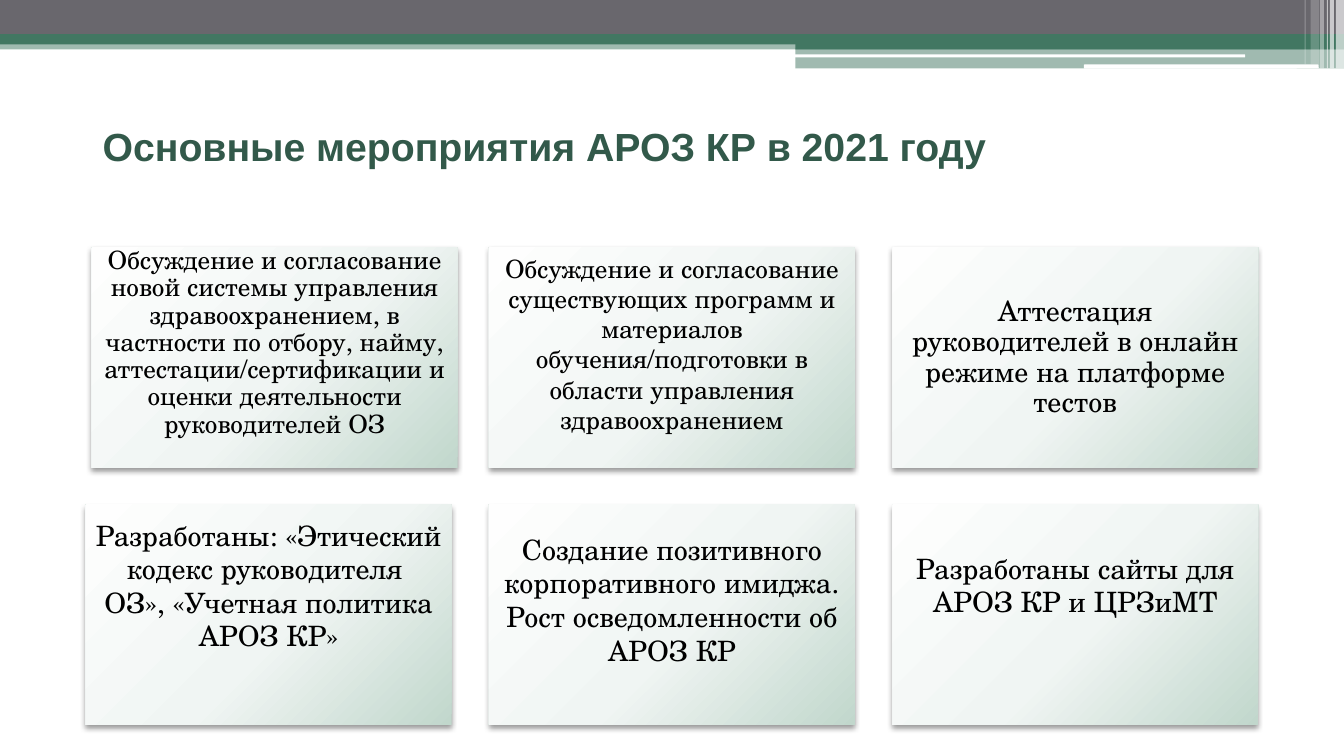
from lxml import etree
from pptx import Presentation
from pptx import util as u
from pptx.dml.color import RGBColor
from pptx.enum import shapes, text
from pptx.oxml.ns import qn

WIDE, HIGH = 13.33, 7.5
GREEN, GREY, WHITE = "427762", "69676D", "FFFFFF"
SERIF = "TeX Gyre Schola"

# Card grid: left edge, top edge, steps and size
LEFT, TOP, COL, ROW = 0.85, 2.46, 4, 2.55
CARD_W, CARD_H = 3.63, 2.18
STOPS = [(0, "FEFEFE"), (55, "F0F5F3"), (100, "C1D7CC")]

# Header bands: left, top, width, height, colour, opacity
BANDS = [
    (0, 0.4, WIDE, 0.09, GREEN, 50),
    (0, 0, WIDE, 0.34, GREY, 100),
    (0, 0.34, WIDE, 0.1, GREEN, 100),
    (7.89, 0.39, 5.44, 0.1, GREEN, 100),
    (7.89, 0.48, 5.44, 0.2, GREEN, 50),
]
# White rounded lines: left, top, width, height
LINES = [(7.88, 0.54, 4.47, 0.03), (10.75, 0.64, 2.33, 0.04)]
# White stripes at the right: left, width, height, opacity
STRIPES = [
    (13.25, 0.08, 0.68, 65),
    (13.19, 0.04, 0.68, 65),
    (13.16, 0.01, 0.68, 60),
    (13.09, 0.04, 0.68, 40),
    (13, 0.08, 0.64, 20),
    (12.94, 0.01, 0.64, 30),
]
# Cards: column, row, shift to the right, top inset (None centres), size, line spacing, wording
CARDS = [
    (0, 0, 0.06, 0, 18, 0.9,
     "Обсуждение и согласование новой системы управления здравоохранением, "
     "в частности по отбору, найму, аттестации/сертификации и оценки "
     "деятельности руководителей ОЗ"),
    (1, 0, 0, 0.05, 18, 1,
     "Обсуждение и согласование существующих программ и материалов "
     "обучения/подготовки в области управления здравоохранением"),
    (2, 0, 0, None, 20, 0.9,
     "Аттестация руководителей в онлайн режиме на платформе тестов"),
    (0, 1, 0, 0.13, 20, 1,
     "Разработаны: «Этический кодекс руководителя  ОЗ», "
     "«Учетная политика АРОЗ КР»"),
    (1, 1, 0, 0.27, 20, 1,
     "Создание позитивного корпоративного имиджа. "
     "Рост осведомленности об АРОЗ КР"),
    (2, 1, 0, 0.46, 20, 1,
     "Разработаны сайты для АРОЗ КР и ЦРЗиМТ"),
]


def paint(hue):
    return RGBColor.from_string(hue)


def add(root, tag, **attrs):
    """Append a drawing element with the given attributes."""
    node = etree.SubElement(root, qn("a:" + tag))
    for name, value in attrs.items():
        node.set(name, str(value))
    return node


def tint(root, hue, alpha=100):
    node = add(root, "srgbClr", val=hue)
    if alpha < 100:
        add(node, "alpha", val=alpha * 1000)


def block(slide, box, hue=WHITE, alpha=100, kind=shapes.MSO_SHAPE.RECTANGLE):
    shape = slide.shapes.add_shape(kind, *map(u.Inches, box))
    shape.shadow.inherit = False
    shape.line.fill.background()
    shape.fill.solid()
    shape.fill.fore_color.rgb = paint(hue)
    if alpha < 100:
        color = shape.fill._xPr.find(qn("a:solidFill"))[0]
        add(color, "alpha", val=alpha * 1000)
    return shape


def write(shape, words, size, font, hue, bold=False, align=text.PP_ALIGN.LEFT,
          space=1, inset=None, side=0.1):
    frame = shape.text_frame
    frame.word_wrap = True
    middle = inset is None
    frame.vertical_anchor = text.MSO_ANCHOR.MIDDLE if middle else text.MSO_ANCHOR.TOP
    frame.margin_left = frame.margin_right = u.Inches(side)
    frame.margin_top = u.Inches(0.05 if middle else inset)
    para = frame.paragraphs[0]
    para.alignment = align
    para.line_spacing = space
    run = para.add_run()
    run.text = words
    run.font.size = u.Pt(size)
    run.font.name = font
    run.font.bold = bold
    run.font.color.rgb = paint(hue)


def shade(shape):
    """Give a card its radial gradient and soft shadow."""
    props = shape._element.spPr
    grad = etree.Element(qn("a:gradFill"), rotWithShape="1")
    stops = add(grad, "gsLst")
    for share, hue in STOPS:
        tint(add(stops, "gs", pos=share * 1000), hue)
    focus = add(grad, "path", path="circle")
    add(focus, "fillToRect", l=-40000, t=-90000, r=140000, b=190000)
    props.replace(props.find(qn("a:solidFill")), grad)
    glow = add(props.find(qn("a:effectLst")), "outerShdw",
               blurRad=u.Pt(4.1), dist=u.Pt(2), dir=90 * 60000, rotWithShape=0)
    tint(glow, "000000", 40)


def card(slide, col, row, shift, inset, size, space, words):
    box = (LEFT + col * COL + shift, TOP + row * ROW, CARD_W, CARD_H)
    shape = block(slide, box)
    shade(shape)
    write(shape, words, size, SERIF, "000000", align=text.PP_ALIGN.CENTER,
          space=space, inset=inset, side=0.07 if size == 18 else 0.08)


def header(slide):
    for *box, hue, alpha in BANDS:
        block(slide, box, hue, alpha)
    for box in LINES:
        block(slide, box, kind=shapes.MSO_SHAPE.ROUNDED_RECTANGLE)
    for left, width, height, alpha in STRIPES:
        block(slide, (left, 0, width, height), alpha=alpha)


def main():
    deck = Presentation()
    deck.slide_width, deck.slide_height = u.Inches(WIDE), u.Inches(HIGH)
    slide = deck.slides.add_slide(deck.slide_layouts[6])
    header(slide)
    title = slide.shapes.add_textbox(*map(u.Inches, (0.92, 0.7, 10.75, 1.5)))
    write(title, "Основные мероприятия АРОЗ КР в 2021 году", 28, "Arial",
          "32594A", bold=True)
    for item in CARDS:
        card(slide, *item)
    deck.save("out.pptx")


if __name__ == "__main__":
    main()
